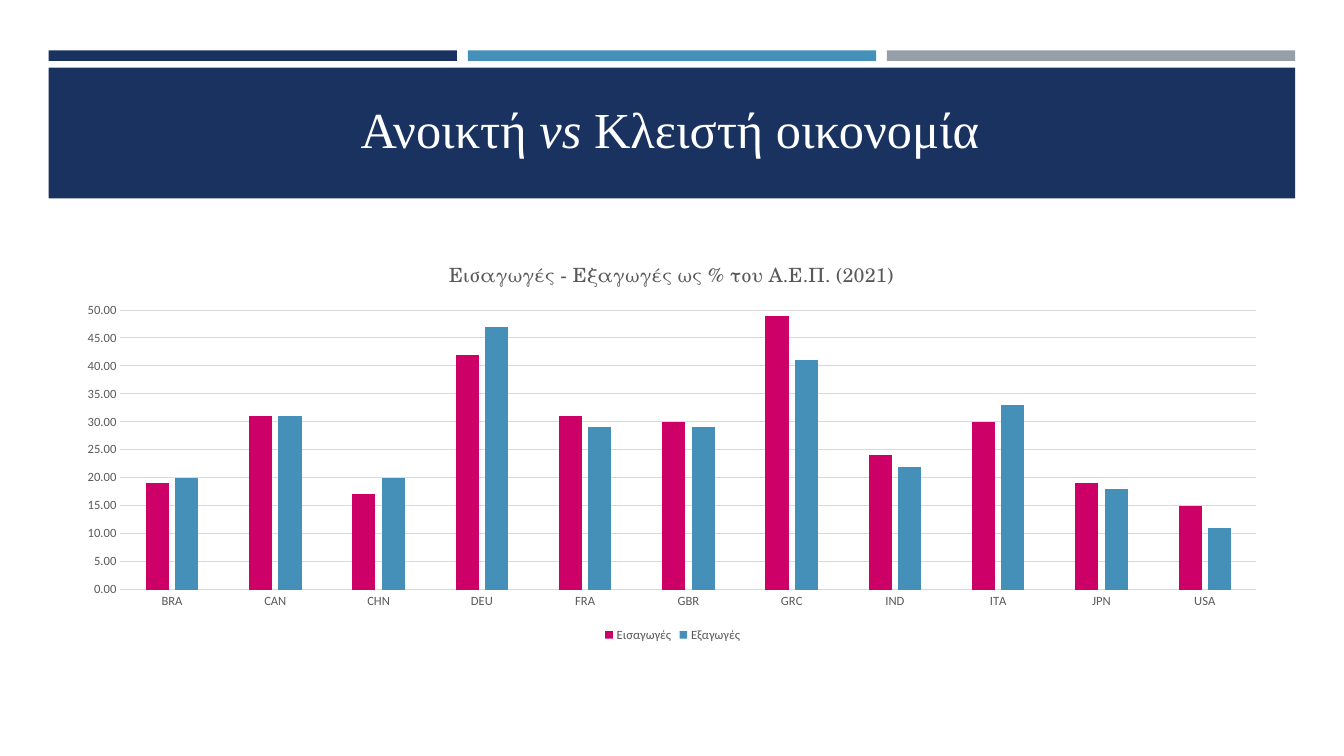
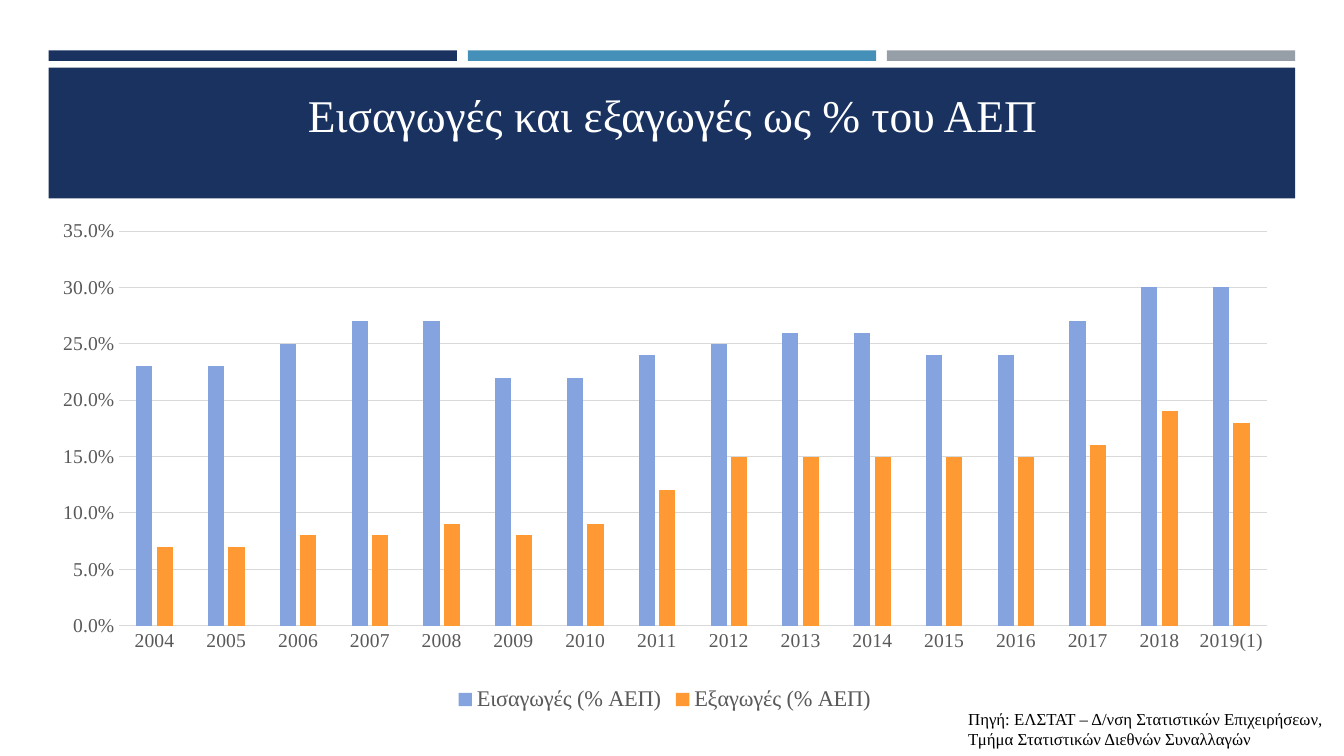
import dataclasses

import lxml.etree
import pptx
import pptx.chart.data
import pptx.dml.color
import pptx.enum.chart
import pptx.enum.shapes
import pptx.enum.text
import pptx.oxml.ns
import pptx.util


@dataclasses.dataclass(frozen=True)
class Theme:
    navy: str = "1A3260"
    blue: str = "4590B8"
    silver: str = "969FA7"
    white: str = "FFFFFF"
    black: str = "000000"
    label: str = "595959"
    grid: str = "D9D9D9"
    magenta: str = "CC0066"
    periwinkle: str = "85A3DE"
    orange: str = "FF9933"
    serif: str = "Times New Roman"
    sans: str = "Calibri"
    school: str = "TeX Gyre Schola"
    title_size: float = 36
    long_title_size: float = 32.4
    chart_title_size: float = 14
    source_size: float = 12
    rule: float = 0.75


def rgb(color):
    return pptx.dml.color.RGBColor.from_string(color)


def place_in_chart(part, position, **percents):
    """Fix a chart part by percents of the chart's size."""
    qn = pptx.oxml.ns.qn
    for automatic in part.findall(qn("c:layout")):
        part.remove(automatic)
    layout = lxml.etree.Element(qn("c:layout"))
    manual = lxml.etree.SubElement(layout, qn("c:manualLayout"))
    settings = {"xMode": "edge", "yMode": "edge"}
    if "w" in percents:
        settings = {"layoutTarget": "inner", **settings}
    settings.update((tag, round(percent / 100, 3)) for tag, percent in percents.items())
    for tag, value in settings.items():
        lxml.etree.SubElement(manual, qn("c:" + tag)).set("val", str(value))
    part.insert(position, layout)


class Deck:
    """Holds the style and the current slide; boxes are in percent of the slide."""

    def __init__(self, theme):
        self.theme = theme
        self.file = pptx.Presentation()
        self.file.slide_width = pptx.util.Inches(13.33)
        self.file.slide_height = pptx.util.Inches(7.5)
        self.layout = self.file.slide_layouts.get_by_name("Title Only")
        self.slide = None

    def box(self, left, top, width, height):
        across, down = self.file.slide_width / 100, self.file.slide_height / 100
        return [round(share * unit) for share, unit in
                zip((left, top, width, height), (across, down, across, down))]

    def new_slide(self):
        first = self.slide is None
        self.slide = self.file.slides.add_slide(self.layout)
        if first:
            self.add_frame()

    def add_frame(self):
        """Put the three bands and the title banner on the shared layout."""
        left, total, gap = 3.62, 92.75, 0.8
        width = (total - 2 * gap) / 3
        colors = (self.theme.navy, self.theme.blue, self.theme.silver)
        for column, color in enumerate(colors):
            self.add_band((left + column * (width + gap), 6.65, width, 1.4), color)
        self.add_band((left, 8.95, total, 17.3), self.theme.navy)

    def add_band(self, box, color):
        band = self.slide.shapes.add_shape(
            pptx.enum.shapes.MSO_SHAPE.RECTANGLE, *self.box(*box))
        band.shadow.inherit = False
        band.fill.solid()
        band.fill.fore_color.rgb = rgb(color)
        band.line.fill.background()
        self.layout.shapes.element.insert(2, band.element)

    def style(self, font, size, color, family):
        font.name = family
        font.size = pptx.util.Pt(size)
        font.color.rgb = rgb(color)

    def add_runs(self, paragraph, runs, size, color, family):
        for text, italic in runs:
            run = paragraph.add_run()
            run.text = text
            self.style(run.font, size, color, family)
            run.font.italic = italic

    def add_title(self, box, runs, size, anchor):
        title = self.slide.shapes.title
        title.left, title.top, title.width, title.height = self.box(*box)
        frame = title.text_frame
        frame.word_wrap = True
        frame.auto_size = pptx.enum.text.MSO_AUTO_SIZE.NONE
        frame.vertical_anchor = anchor
        heading = frame.paragraphs[0]
        heading.alignment = pptx.enum.text.PP_ALIGN.CENTER
        self.add_runs(heading, runs, size, self.theme.white, self.theme.serif)

    def add_source(self, box, text):
        source = self.slide.shapes.add_textbox(*self.box(*box))
        frame = source.text_frame
        frame.word_wrap = True
        frame.auto_size = pptx.enum.text.MSO_AUTO_SIZE.SHAPE_TO_FIT_TEXT
        self.add_runs(frame.paragraphs[0], [(text, False)],
                      self.theme.source_size, self.theme.black, self.theme.serif)

    def add_columns(self, box, categories, series, family, axis_size, legend_size,
                    number_format, top_value, step, plot):
        theme = self.theme
        data = pptx.chart.data.CategoryChartData(number_format=number_format)
        data.categories = categories
        for name, values, _ in series:
            data.add_series(name, values)
        chart = self.slide.shapes.add_chart(
            pptx.enum.chart.XL_CHART_TYPE.COLUMN_CLUSTERED, *self.box(*box), data).chart
        chart.has_title = False
        self.style(chart.font, legend_size, theme.label, family)

        # Columns
        columns = chart.plots[0]
        columns.gap_width, columns.overlap = 219, -27
        columns.vary_by_categories = False
        for drawn, (_, _, color) in zip(columns.series, series):
            drawn.invert_if_negative = False
            drawn.format.fill.solid()
            drawn.format.fill.fore_color.rgb = rgb(color)

        # Axes and grid
        for axis in (chart.category_axis, chart.value_axis):
            axis.major_tick_mark = pptx.enum.chart.XL_TICK_MARK.NONE
            axis.minor_tick_mark = pptx.enum.chart.XL_TICK_MARK.NONE
            self.style(axis.tick_labels.font, axis_size, theme.label, family)
        scale = chart.value_axis
        scale.minimum_scale, scale.maximum_scale, scale.major_unit = 0, top_value, step
        scale.tick_labels.number_format = number_format
        scale.tick_labels.number_format_is_linked = False
        scale.format.line.fill.background()
        scale.has_major_gridlines = True
        for line in (chart.category_axis.format.line, scale.major_gridlines.format.line):
            line.color.rgb = rgb(theme.grid)
            line.width = pptx.util.Pt(theme.rule)

        # Legend and plot area
        chart.has_legend = True
        chart.legend.position = pptx.enum.chart.XL_LEGEND_POSITION.BOTTOM
        chart.legend.include_in_layout = False
        self.style(chart.legend.font, legend_size, theme.label, family)
        plot_area = chart.element.find(".//" + pptx.oxml.ns.qn("c:plotArea"))
        place_in_chart(plot_area, 0, **dict(zip("xywh", plot)))
        return chart

    def add_chart_title(self, chart, text, x, y):
        chart.has_title = True
        caption = chart.chart_title
        caption.include_in_layout = False
        self.add_runs(caption.text_frame.paragraphs[0], [(text, False)],
                      self.theme.chart_title_size, self.theme.label, self.theme.school)
        caption.text_frame.paragraphs[0].runs[0].font.bold = False
        place_in_chart(caption.element, 1, x=x, y=y)


def main():
    theme = Theme()
    deck = Deck(theme)
    anchors = pptx.enum.text.MSO_ANCHOR

    # Open and closed economies
    deck.new_slide()
    deck.add_title((3.75, 7.9, 92.2, 18.1),
                   [("Ανοικτή ", False), ("vs", True), (" Κλειστή οικονομία", False)],
                   theme.title_size, anchors.MIDDLE)
    countries = ["BRA", "CAN", "CHN", "DEU", "FRA", "GBR",
                 "GRC", "IND", "ITA", "JPN", "USA"]
    trade_by_country = [
        ("Εισαγωγές", [19, 31, 17, 42, 31, 30, 49, 24, 30, 19, 15], theme.magenta),
        ("Εξαγωγές", [20, 31, 20, 47, 29, 29, 41, 22, 33, 18, 11], theme.blue),
    ]
    comparison = deck.add_columns(
        (4.8, 31.9, 90.5, 53.6), countries, trade_by_country, theme.sans,
        axis_size=9, legend_size=9, number_format="0.00", top_value=50, step=5,
        plot=(4.6, 17, 93.4, 69))
    deck.add_chart_title(comparison, "Εισαγωγές - Εξαγωγές ως % του Α.Ε.Π. (2021)",
                         x=31.3, y=3)

    # Imports and exports over time
    deck.new_slide()
    deck.add_title((4.8, 10.8, 90.5, 13.6),
                   [("Εισαγωγές και εξαγωγές ως % του ΑΕΠ", False)],
                   theme.long_title_size, anchors.TOP)
    years = [str(year) for year in range(2004, 2019)] + ["2019(1)"]
    trade_by_year = [
        ("Εισαγωγές (% ΑΕΠ)",
         [0.23, 0.23, 0.25, 0.27, 0.27, 0.22, 0.22, 0.24,
          0.25, 0.26, 0.26, 0.24, 0.24, 0.27, 0.3, 0.3], theme.periwinkle),
        ("Εξαγωγές (% ΑΕΠ)",
         [0.07, 0.07, 0.08, 0.08, 0.09, 0.08, 0.09, 0.12,
          0.15, 0.15, 0.15, 0.15, 0.15, 0.16, 0.19, 0.18], theme.orange),
    ]
    deck.add_columns(
        (3.6, 27.9, 91.7, 66.9), years, trade_by_year, theme.serif,
        axis_size=14, legend_size=16, number_format="0.0%", top_value=0.35, step=0.05,
        plot=(5.7, 4, 93.2, 78))
    deck.add_source((71.3, 93.1, 28.7, 6.7),
                    "Πηγή: ΕΛΣΤΑΤ – Δ/νση Στατιστικών Επιχειρήσεων, "
                    "Τμήμα Στατιστικών Διεθνών Συναλλαγών")

    deck.file.save("out.pptx")


if __name__ == "__main__":
    main()
